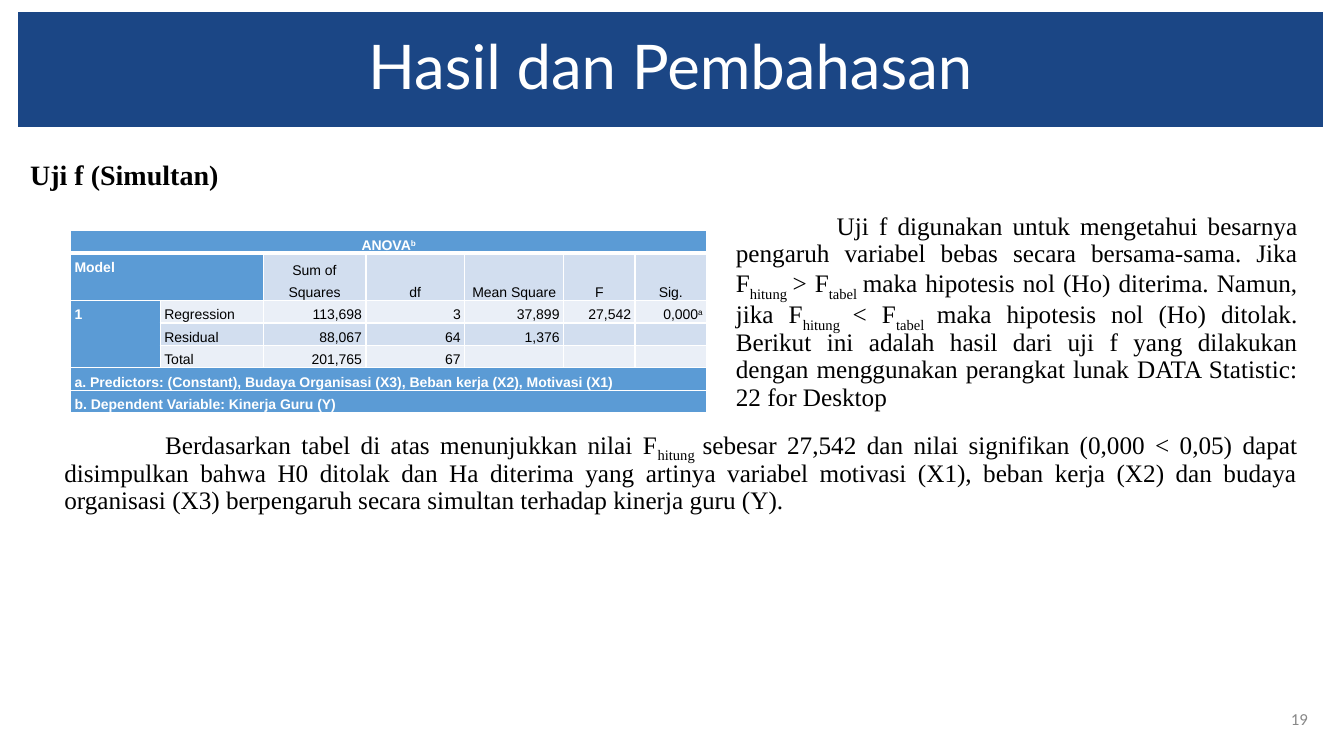
from lxml import etree
from pptx import Presentation
from pptx.dml.color import RGBColor
from pptx.enum.shapes import MSO_SHAPE
from pptx.enum.text import MSO_ANCHOR, PP_ALIGN
from pptx.oxml.ns import qn
from pptx.util import Emu, Pt

RECT = MSO_SHAPE.RECTANGLE
TOP, MIDDLE, BOTTOM = MSO_ANCHOR.TOP, MSO_ANCHOR.MIDDLE, MSO_ANCHOR.BOTTOM
LEFT, CENTER, RIGHT, JUSTIFY = PP_ALIGN.LEFT, PP_ALIGN.CENTER, PP_ALIGN.RIGHT, PP_ALIGN.JUSTIFY

EMU_PER_PX = 9144
SUB, SUPER = -25, 30
NAVY, BLUE, LIGHT, PALE = "1B4685", "5B9BD5", "D2DEEF", "EAEFF7"
WHITE, BLACK, GRAY = "FFFFFF", "000000", "888888"
SERIF = "Times New Roman"

COLUMNS = [89, 102, 102, 98, 98, 71, 71]
ROWS = [22, 47, 22, 22, 22, 22, 22]
SPANS = [(0, 0, 0, 6), (1, 0, 1, 1), (2, 0, 4, 0), (5, 0, 5, 6), (6, 0, 6, 6)]
ANOVA = [
    [[("ANOVA", 0), ("b", SUPER)]],
    ["Model", "", "Sum of Squares", "df", "Mean Square", "F", "Sig."],
    ["1", "Regression", "113,698", "3", "37,899", "27,542", [("0,000", 0), ("a", SUPER)]],
    ["", "Residual", "88,067", "64", "1,376"],
    ["", "Total", "201,765", "67"],
    ["a. Predictors: (Constant), Budaya Organisasi (X3), Beban kerja (X2), Motivasi (X1)"],
    ["b. Dependent Variable: Kinerja Guru (Y)"],
]
CONCLUSION = [
    ("Berdasarkan tabel di atas menunjukkan nilai F", 0),
    ("hitung ", SUB),
    ("sebesar 27,542 dan nilai signifikan (0,000 < 0,05) dapat disimpulkan bahwa "
     "H0 ditolak dan Ha diterima yang artinya variabel motivasi (X1), beban kerja (X2) "
     "dan budaya organisasi (X3) berpengaruh secara simultan terhadap kinerja guru (Y).", 0),
]
EXPLANATION = [
    ("Uji f digunakan untuk mengetahui besarnya pengaruh variabel bebas secara "
     "bersama-sama. Jika F", 0),
    ("hitung ", SUB),
    ("> F", 0),
    ("tabel ", SUB),
    ("maka hipotesis nol (Ho) diterima. Namun, jika F", 0),
    ("hitung ", SUB),
    ("< F", 0),
    ("tabel ", SUB),
    ("maka hipotesis nol (Ho) ditolak. Berikut ini adalah hasil dari uji f yang dilakukan "
     "dengan menggunakan perangkat lunak DATA Statistic: 22 for Desktop", 0),
]


def px(n):
    return Emu(n * EMU_PER_PX)


def rgb(value):
    return RGBColor.from_string(value)


class Deck:
    def __init__(self, width, height):
        self.prs = Presentation()
        self.prs.slide_width, self.prs.slide_height = px(width), px(height)
        self.s = self.prs.slides.add_slide(self.prs.slide_layouts[6])

    def add_runs(self, tf, runs, size, font, color, bold=False, align=LEFT, spacing=1.0):
        p = tf.paragraphs[0]
        p.alignment, p.line_spacing = align, spacing
        for text, baseline in [(runs, 0)] if isinstance(runs, str) else runs:
            r = p.add_run()
            r.text = text
            r.font.size, r.font.name, r.font.bold = Pt(size), font, bold
            r.font.color.rgb = rgb(color)
            if baseline:
                r.font._element.set("baseline", str(baseline * 1000))
        return p

    def banner(self, box, text, fill):
        sp = self.s.shapes.add_shape(RECT, *map(px, box))
        sp.shadow.inherit = False
        sp.fill.solid()
        sp.fill.fore_color.rgb = rgb(fill)
        sp.line.fill.background()
        sp.text_frame.vertical_anchor = MIDDLE
        self.add_runs(sp.text_frame, text, 44, "Lato", WHITE, align=CENTER, spacing=0.9)

    def text(self, box, runs, size, font, color, anchor=TOP, wrap=True, **style):
        tf = self.s.shapes.add_textbox(*map(px, box)).text_frame
        tf.word_wrap, tf.vertical_anchor = wrap, anchor
        return self.add_runs(tf, runs, size, font, color, **style)

    def body(self, box, runs):
        p = self.text(box, runs, 18, SERIF, BLACK, align=JUSTIFY, spacing=0.9)
        pPr = p._p.get_or_add_pPr()
        pPr.set("marL", str(px(6)))
        pPr.set("indent", str(px(100)))

    def border(self, cell, side, width):
        ln = etree.SubElement(cell._tc.get_or_add_tcPr(), qn("a:ln" + side), w=str(Pt(width)))
        fill = etree.SubElement(ln, qn("a:solidFill"))
        etree.SubElement(fill, qn("a:srgbClr"), val=WHITE)

    def cell(self, cell, row, col, runs):
        heading = row in (0, 5, 6) or col == 0 or (row, col) == (1, 1)
        for side in "LRTB":
            thick = (row, side) in ((0, "B"), (1, "T"))
            self.border(cell, side, 3 if thick else 1)
        cell.fill.solid()
        cell.fill.fore_color.rgb = rgb(BLUE if heading else LIGHT if row % 2 else PALE)
        cell.margin_left = cell.margin_right = px(4)
        cell.margin_top = cell.margin_bottom = 0
        cell.vertical_anchor = MIDDLE if row == 0 else BOTTOM if row == 1 and col > 1 else TOP
        if row == 0 or (row == 1 and col > 1):
            align = CENTER
        else:
            align = RIGHT if col > 1 else LEFT
        if runs:
            self.add_runs(cell.text_frame, runs, 10, "Arial", WHITE if heading else BLACK,
                          bold=heading, align=align, spacing=Pt(16))
        else:
            p = self.add_runs(cell.text_frame, [], 10, "Arial", BLACK, spacing=Pt(16))
            p._p.get_or_add_endParaRPr().set("sz", "1000")

    def table(self, left, top, columns, rows, spans, data):
        box = map(px, (left, top, sum(columns), sum(rows)))
        tbl = self.s.shapes.add_table(len(rows), len(columns), *box).table
        tbl.first_row = tbl.horz_banding = False
        for column, width in zip(tbl.columns, columns):
            column.width = px(width)
        for row, height in zip(tbl.rows, rows):
            row.height = px(height)
        for r1, c1, r2, c2 in spans:
            tbl.cell(r1, c1).merge(tbl.cell(r2, c2))
        for i, values in enumerate(data):
            for j in range(len(columns)):
                self.cell(tbl.cell(i, j), i, j, values[j] if j < len(values) else "")


def main():
    deck = Deck(1333, 750)
    deck.text((1250, 693, 57, 40), "19", 12, "Calibri", GRAY, anchor=MIDDLE, align=RIGHT)
    deck.banner((18, 12, 1294, 114), "Hasil dan Pembahasan", NAVY)
    deck.body((48, 421, 1249, 112), CONCLUSION)
    deck.table(70, 229, COLUMNS, ROWS, SPANS, ANOVA)
    deck.body((714, 207, 583, 112), EXPLANATION)
    deck.text((20, 149, 208, 44), "Uji f (Simultan)", 20, SERIF, BLACK, wrap=False,
              bold=True, align=JUSTIFY, spacing=1.07)
    deck.prs.save("out.pptx")


if __name__ == "__main__":
    main()
